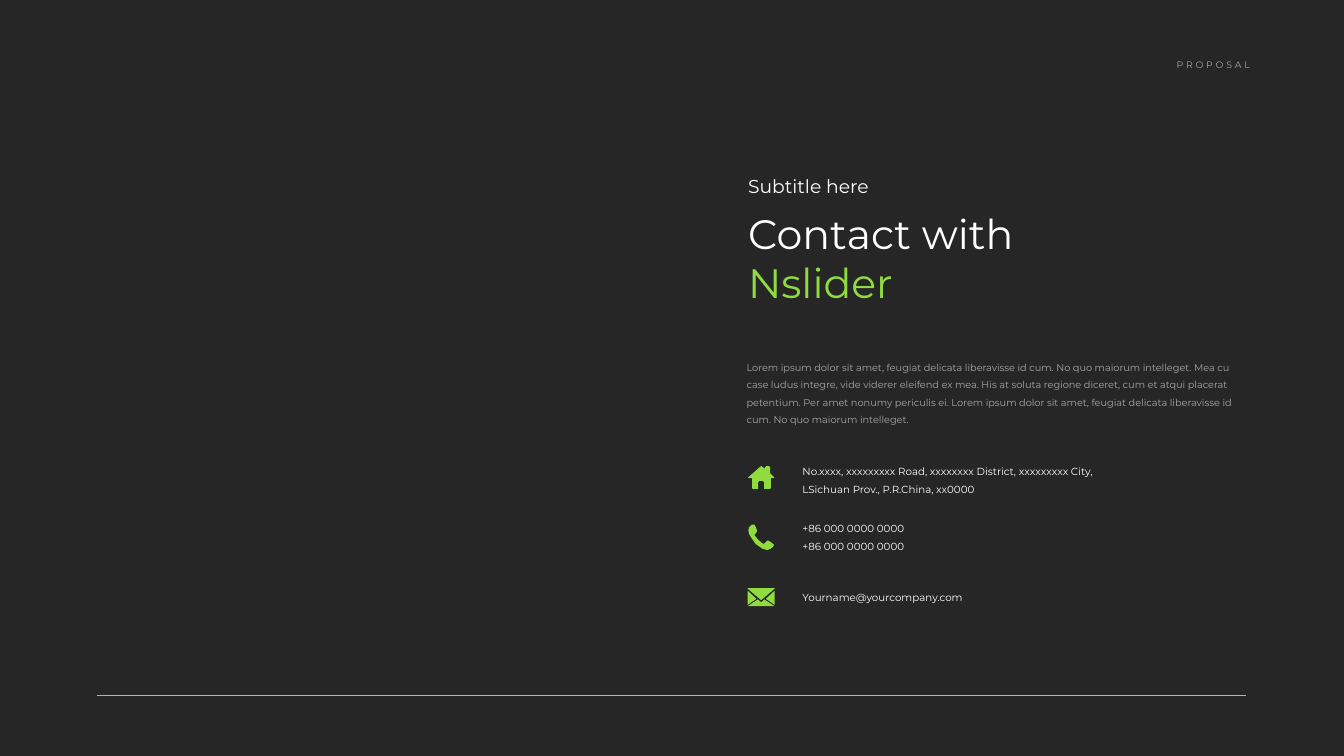
from lxml.etree import SubElement
from pptx import Presentation
from pptx.dml.color import RGBColor
from pptx.enum.shapes import MSO_CONNECTOR
from pptx.enum.text import MSO_ANCHOR as ANCHOR, MSO_AUTO_SIZE as AUTO, PP_ALIGN as ALIGN
from pptx.oxml.ns import qn
from pptx.util import Cm, Pt

DARK = RGBColor(0x26, 0x26, 0x26)
GREEN = RGBColor(0x90, 0xDC, 0x3F)
GREY = RGBColor(0xA6, 0xA6, 0xA6)
WHITE = RGBColor(0xFF, 0xFF, 0xFF)
FONT = "Montserrat"
ICON_UNIT = Cm(2.54) / 100

HOUSE = [[(27, 0), (31, 0), (33, 2), (33, 11), (39, 17), (38, 18), (34, 18),
          (34, 33), (32, 34), (24, 34), (24, 24), (22, 22), (17, 22), (15, 24),
          (15, 34), (7, 34), (6, 33), (6, 18), (1, 18), (0, 17), (18, 1),
          (20, 0), (21, 1), (25, 4), (25, 2)]]
PHONE = [[(6, 0), (9, 0), (10, 2), (11, 4), (13, 9), (13, 10), (11, 13),
          (9, 15), (10, 17), (15, 23), (21, 28), (23, 29), (26, 26), (28, 24),
          (30, 24), (33, 26), (36, 28), (38, 30), (37, 33), (33, 36), (28, 38),
          (21, 36), (11, 29), (4, 19), (1, 14), (0, 9), (1, 4), (5, 0)]]
ENVELOPE = [[(0, 0), (40, 0), (40, 1), (20, 18), (0, 1)],
            [(0, 4), (13, 16), (0, 25)],
            [(40, 4), (40, 25), (27, 16)],
            [(15, 17), (20, 21), (25, 17), (40, 27), (0, 27)]]


def add_run(p, text, size, color):
    """Append one formatted run to a paragraph and return it."""
    r = p.add_run()
    r.text = text
    r.font.name, r.font.size = FONT, Pt(size)
    r.font.color.rgb = color
    return r


def add_text_box(slide, left, top, width, height):
    """Add a wrapping text box and return its text frame."""
    tf = slide.shapes.add_textbox(Cm(left), Cm(top), Cm(width), Cm(height)).text_frame
    tf.word_wrap = True
    return tf


def add_frame(slide, left, top, width, height):
    """Place the running header and the footer rule within the page box."""
    p = add_text_box(slide, left + width - 5.6, top, 6, 0.69).paragraphs[0]
    p.alignment = ALIGN.RIGHT
    r = add_run(p, "PROPOSAL", 10, GREY)
    r.font._element.set("spc", "300")
    y = Cm(top + height)
    rule = slide.shapes.add_connector(MSO_CONNECTOR.STRAIGHT, Cm(left), y, Cm(left + width), y)
    rule.line.color.rgb = GREEN
    rule.line.width = Pt(1.5)
    SubElement(rule._element.spPr, qn("a:effectLst"))


def add_heading(slide, left, top, width, height):
    """Set the subtitle and two-colour heading in the title placeholder."""
    title = slide.shapes.title
    title.left, title.top, title.width, title.height = map(Cm, (left, top, width, height))
    tf = title.text_frame
    tf.word_wrap, tf.auto_size, tf.vertical_anchor = True, AUTO.NONE, ANCHOR.TOP
    subtitle, heading = tf.paragraphs[0], tf.add_paragraph()
    subtitle.alignment = heading.alignment = ALIGN.LEFT
    heading.space_before = Pt(12)
    add_run(subtitle, "Subtitle here", 20, WHITE)
    add_run(heading, "Contact with ", 44, WHITE)
    add_run(heading, "Nslider", 44, GREEN)


def add_intro(slide, left, top, width, height):
    """Add the introductory paragraph."""
    p = add_text_box(slide, left, top, width, height).paragraphs[0]
    p.line_spacing, p.space_before = 1.5, Pt(12)
    add_run(p, "Lorem ipsum dolor sit amet, feugiat delicata liberavisse id cum. "
               "No quo maiorum intelleget. Mea cu case ludus integre, vide viderer "
               "eleifend ex mea. His at soluta regione diceret, cum et atqui placerat "
               "petentium. Per amet nonumy periculis ei. Lorem ipsum dolor sit amet, "
               "feugiat delicata liberavisse id cum. No quo maiorum intelleget.", 10.5, GREY)


def add_icon(slide, outlines, center_x, center_y):
    """Draw an icon from its outlines, centred on a point."""
    points = [point for outline in outlines for point in outline]
    x = int(center_x - max(px for px, _ in points) * ICON_UNIT / 2)
    y = int(center_y - max(py for _, py in points) * ICON_UNIT / 2)
    shapes = slide.shapes.add_group_shape().shapes if len(outlines) > 1 else slide.shapes
    for start, *rest in outlines:
        builder = shapes.build_freeform(*start, scale=ICON_UNIT)
        builder.add_line_segments(rest, close=True)
        sp = builder.convert_to_shape(x, y)
        sp.shadow.inherit = False
        sp.fill.solid()
        sp.fill.fore_color.rgb = GREEN
        sp.line.fill.background()


def add_contact(slide, outlines, lines, left, center, width, height):
    """Add one contact row: an icon and its lines of (text, spacing)."""
    add_icon(slide, outlines, Cm(left + 0.52), Cm(center))
    tf = add_text_box(slide, left + 2.08, center - height / 2, width - 2.08, height)
    tf.vertical_anchor = ANCHOR.MIDDLE
    tf.margin_left = tf.margin_right = 0
    tf.margin_top = tf.margin_bottom = Cm(0.38)
    for i, (text, spacing) in enumerate(lines):
        p = tf.add_paragraph() if i else tf.paragraphs[0]
        p.line_spacing = spacing
        add_run(p, text, 11, WHITE)


def add_contacts(slide, left, top, width, pitch):
    """Stack the contact rows at an equal pitch."""
    phone = "+86 000 0000 0000"
    rows = [
        (HOUSE, [("No.xxxx, xxxxxxxxx Road, xxxxxxxx District, xxxxxxxxx City, "
                  "LSichuan Prov., P.R.China, xx0000", 1.5)], 2.08),
        (PHONE, [(phone, 1.0), (phone, 1.5)], 1.83),
        (ENVELOPE, [("Yourname@yourcompany.com", 1.0)], 1.22),
    ]
    for i, (outlines, lines, height) in enumerate(rows):
        add_contact(slide, outlines, lines, left, top + i * pitch, width, height)


def main():
    """Build and save the contact slide."""
    prs = Presentation()
    prs.slide_width = Cm(50.8)
    prs.slide_height = prs.slide_width * 9 // 16
    slide = prs.slides.add_slide(prs.slide_layouts[5])
    slide.background.fill.solid()
    slide.background.fill.fore_color.rgb = DARK
    add_frame(slide, 3.68, 2.13, 43.41, 24.16)
    add_heading(slide, 28.02, 6.48, 12.6, 5.31)
    add_intro(slide, 27.97, 13.31, 19.1, 2.87)
    add_contacts(slide, 28.25, 18.05, 13.3, 2.26)
    prs.save("out.pptx")


if __name__ == "__main__":
    main()
